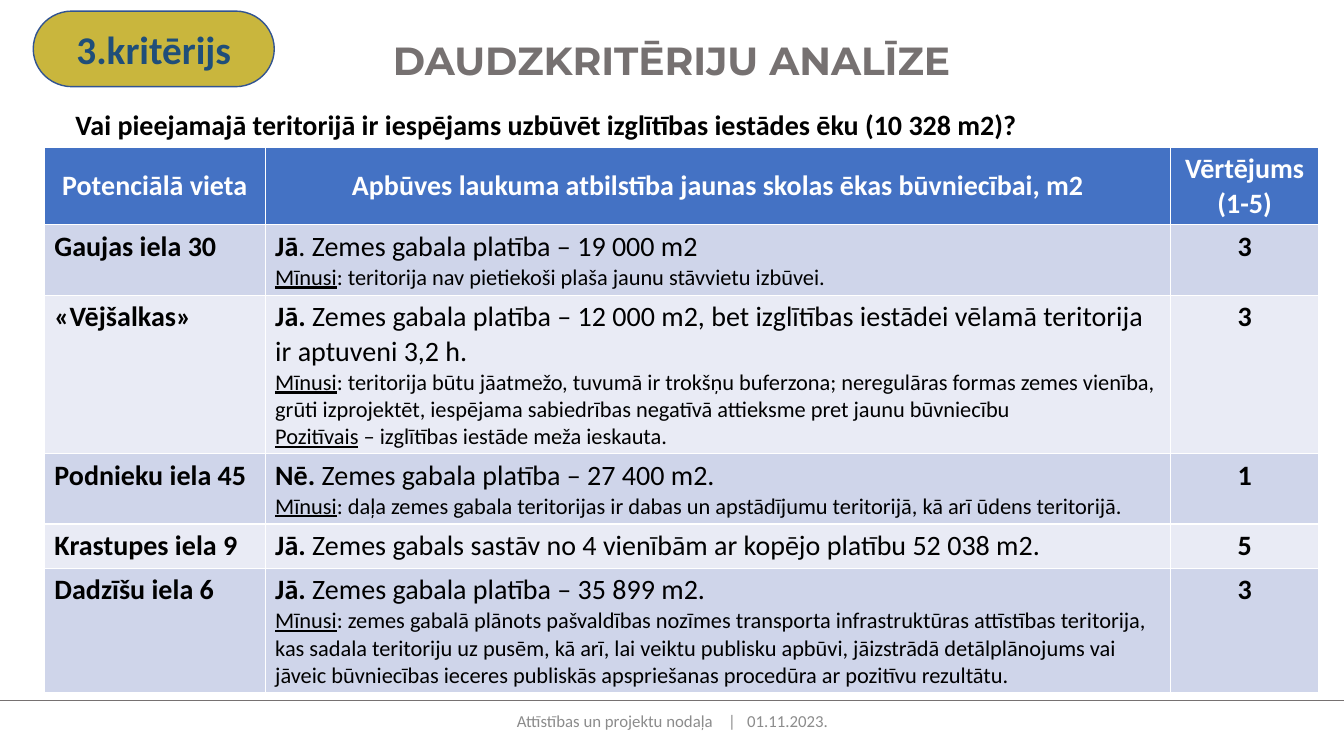
from dataclasses import dataclass
from typing import Any

from lxml import etree
from pptx import Presentation
from pptx import util as u
from pptx.dml.color import RGBColor
from pptx.enum import shapes, text
from pptx.oxml import ns

COLORS = {
    "white": "FFFFFF", "black": "000000", "grey": "767171", "footer": "8C8C8C",
    "header": "4472C4", "odd": "CFD5EA", "even": "E9EBF5",
    "badge": "C9B63D", "badge_line": "325491", "badge_text": "1F4E79",
}
CENTER = text.PP_ALIGN.CENTER
MIDDLE = text.MSO_ANCHOR.MIDDLE

# Text formats
BODY = {"name": "Calibri", "size": u.Pt(20), "bold": False}
STRONG = {**BODY, "bold": True}
NOTE = {**BODY, "size": u.Pt(16)}
NOTE_LABEL = {**NOTE, "underline": True}
TITLE = {"name": "Montserrat", "size": u.Pt(28), "bold": True}
BADGE = {**STRONG, "size": u.Pt(28)}
FOOTER = {**BODY, "size": u.Pt(12)}


@dataclass
class Box:
    left: float
    top: float
    width: float
    height: float

    def inches(self) -> list[int]:
        return [u.Inches(v) for v in (self.left, self.top, self.width, self.height)]


@dataclass
class Site:
    name: str
    answer: str
    area: str
    notes: list[tuple[str, str]]
    score: str
    height: float


def color(name: str) -> RGBColor:
    return RGBColor.from_string(COLORS[name])


def add_run(p: Any, words: str, fmt: dict[str, Any], ink: str = "black") -> Any:
    r = p.add_run()
    r.text = words
    for key, value in fmt.items():
        setattr(r.font, key, value)
    r.font.color.rgb = color(ink)
    return r


def add_text_box(slide: Any, box: Box) -> Any:
    tf = slide.shapes.add_textbox(*box.inches()).text_frame
    tf.word_wrap = True
    return tf


def fill_cell(cell: Any, fill: str) -> Any:
    cell.fill.solid()
    cell.fill.fore_color.rgb = color(fill)
    return cell.text_frame.paragraphs[0]


def add_sites_table(slide: Any, box: Box) -> None:
    table = slide.shapes.add_table(len(SITES) + 1, len(COLUMNS), *box.inches()).table
    table.rows[0].height = u.Inches(HEADER_HEIGHT)
    for i, (heading, width) in enumerate(COLUMNS):
        table.columns[i].width = u.Inches(width)
        cell = table.cell(0, i)
        cell.vertical_anchor = MIDDLE
        p = fill_cell(cell, "header")
        p.alignment = CENTER
        add_run(p, heading, STRONG, "white")

    for i, site in enumerate(SITES, start=1):
        table.rows[i].height = u.Inches(site.height)
        fill = "odd" if i % 2 else "even"
        name, detail, score = [fill_cell(c, fill) for c in table.rows[i].cells]
        add_run(name, site.name, STRONG)
        add_run(detail, site.answer, STRONG)
        add_run(detail, site.area, BODY)
        for label, note in site.notes:
            p = table.cell(i, 1).text_frame.add_paragraph()
            add_run(p, label, NOTE_LABEL)
            add_run(p, note, NOTE)
        score.alignment = CENTER
        add_run(score, site.score, STRONG)


# Table content
HEADER_HEIGHT = 0.76
COLUMNS = [
    ("Potenciālā vieta", 2.19),
    ("Apbūves laukuma atbilstība jaunas skolas ēkas būvniecībai, m2", 8.98),
    ("Vērtējums (1-5)", 1.47),
]
SITES = [
    Site("Gaujas iela 30", "Jā", ". Zemes gabala platība – 19 000 m2",
         [("Mīnusi", ": teritorija nav pietiekoši plaša jaunu stāvvietu izbūvei.")],
         "3", 0.7),
    Site("«Vējšalkas»", "Jā. ",
         "Zemes gabala platība – 12 000 m2, bet izglītības iestādei vēlamā "
         "teritorija ir aptuveni 3,2 h.",
         [("Mīnusi", ": teritorija būtu jāatmežo, tuvumā ir trokšņu buferzona; "
           "neregulāras formas zemes vienība, grūti izprojektēt, iespējama "
           "sabiedrības negatīvā attieksme pret jaunu būvniecību"),
          ("Pozitīvais", " – izglītības iestāde meža ieskauta.")],
         "3", 1.57),
    Site("Podnieku iela 45", "Nē. ", "Zemes gabala platība – 27 400 m2.",
         [("Mīnusi", ": daļa zemes gabala teritorijas ir dabas un apstādījumu "
           "teritorijā, kā arī ūdens teritorijā.")],
         "1", 0.7),
    Site("Krastupes iela 9", "Jā. ",
         "Zemes gabals sastāv no 4 vienībām ar kopējo platību 52 038 m2.",
         [], "5", 0.44),
    Site("Dadzīšu iela 6", "Jā.", " Zemes gabala platība – 35 899 m2.",
         [("Mīnusi", ": zemes gabalā plānots pašvaldības nozīmes transporta "
           "infrastruktūras attīstības teritorija, kas sadala teritoriju uz pusēm, "
           "kā arī, lai veiktu publisku apbūvi, jāizstrādā detālplānojums vai jāveic "
           "būvniecības ieceres publiskās apspriešanas procedūra ar pozitīvu "
           "rezultātu.")],
         "3", 1.23),
]


def main() -> None:
    prs = Presentation()
    prs.slide_width, prs.slide_height = u.Inches(13.33), u.Inches(7.5)
    slide = prs.slides.add_slide(prs.slide_layouts[6])

    # Footer: letter spacing widens the gaps around the bar
    tf = add_text_box(slide, Box(4.42, 6.95, 4.5, 0.4))
    tf.vertical_anchor = MIDDLE
    p = tf.paragraphs[0]
    p.alignment = CENTER
    for words, spacing in [("Attīstības un projektu nodaļa", 0), (" ", 800),
                           ("|", 0), (" ", 540), ("01.11.2023.", 0)]:
        r = add_run(p, words, FOOTER, "footer")
        r.font._element.set("spc", str(spacing))

    rule = slide.shapes.add_connector(
        shapes.MSO_CONNECTOR.STRAIGHT, 0, u.Inches(6.95), prs.slide_width, u.Inches(6.95))
    rule.line.color.rgb = color("grey")
    rule.line.width = u.Pt(0.5)
    etree.SubElement(rule._element.spPr, ns.qn("a:effectLst"))

    # Title and question
    tf = add_text_box(slide, Box(0.44, 0.31, 12.44, 0.57))
    tf.auto_size = text.MSO_AUTO_SIZE.SHAPE_TO_FIT_TEXT
    p = tf.paragraphs[0]
    p.alignment = CENTER
    add_run(p, "DAUDZKRITĒRIJU ANALĪZE", TITLE, "grey")

    p = add_text_box(slide, Box(0.65, 1.06, 12.24, 1.04)).paragraphs[0]
    p.line_spacing = 0.9
    p.space_before = u.Pt(10)
    add_run(p, "Vai pieejamajā teritorijā ir iespējams uzbūvēt izglītības iestādes "
               "ēku (10 328 m2)?", STRONG)

    # Sites table
    add_sites_table(slide, Box(0.44, 1.46, 12.64, 5.4))

    # Criterion badge
    sp = slide.shapes.add_shape(
        shapes.MSO_SHAPE.FLOWCHART_TERMINATOR, *Box(0.33, 0.11, 2.39, 0.75).inches())
    sp.shadow.inherit = False
    sp.fill.solid()
    sp.fill.fore_color.rgb = color("badge")
    sp.line.color.rgb = color("badge_line")
    sp.line.width = u.Pt(1)
    sp.text_frame.vertical_anchor = MIDDLE
    p = sp.text_frame.paragraphs[0]
    p.alignment = CENTER
    add_run(p, "3.kritērijs", BADGE, "badge_text")

    prs.save("out.pptx")


if __name__ == "__main__":
    main()
